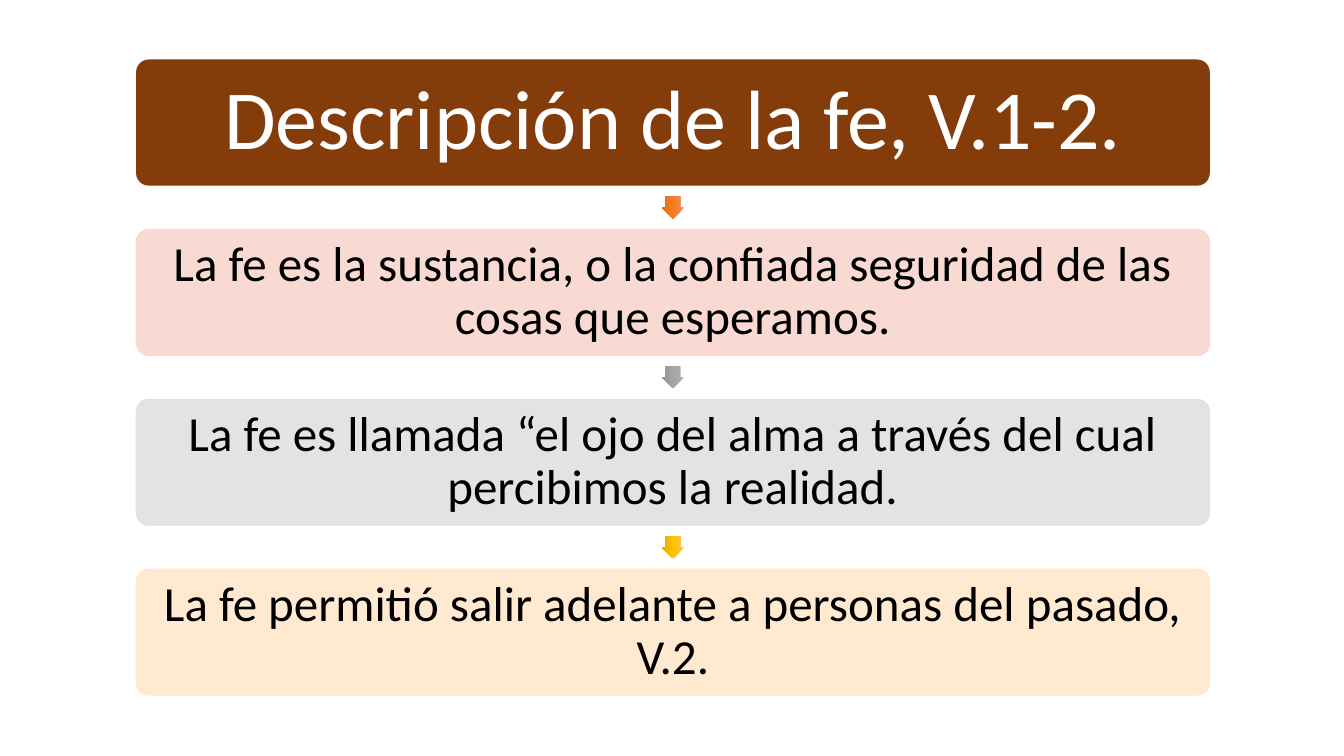
from lxml import etree
from pptx import Presentation
from pptx.dml.color import RGBColor
from pptx.enum.shapes import MSO_SHAPE as SHAPE
from pptx.enum.text import MSO_ANCHOR as ANCHOR, PP_ALIGN as ALIGN
from pptx.oxml.ns import qn
from pptx.util import Cm, Pt

# Layout in centimetres
LEFT, TOP, WIDTH, HEIGHT = 3.43, 1.5, 27.06, 3.18
PITCH = 4.28
ARROW = 0.56

TITLE = "Descripción de la fe, V.1-2."
# Text, box colour, and the gradient of the arrow leading to the box
STEPS = [
    ("La fe es la sustancia, o la confiada seguridad de las cosas que esperamos.",
     "F8D7CE", ("F18C57", "F67B28", "E56C19")),
    ("La fe es llamada “el ojo del alma a través del cual percibimos la realidad.",
     "E1E1E1", ("AFAFAF", "A5A5A5", "939393")),
    ("La fe permitió salir adelante a personas del pasado, V.2.",
     "FFE8CC", ("FFC64B", "FFC000", "E3AB00")),
]


def set_color(fmt, color, alpha=None):
    """Colour a fill or a font; alpha is the opacity in percent."""
    if hasattr(fmt, "solid"):
        fmt.solid()
        target = fmt.fore_color
    else:
        target = fmt.color
    target.rgb = RGBColor.from_string(color)
    return alpha


def set_opacity(sp, percent):
    for clr in sp._element.spPr.iter(qn("a:srgbClr")):
        etree.SubElement(clr, qn("a:alpha"), val=str(percent * 1000))


def set_gradient(sp, colors):
    """Three even stops running at 90 degrees."""
    sp.fill.gradient()
    sp.fill.gradient_angle = 270
    stops = sp._element.spPr.find(qn("a:gradFill")).find(qn("a:gsLst"))
    for stop in list(stops):
        stops.remove(stop)
    for i, color in enumerate(colors):
        stop = etree.SubElement(stops, qn("a:gs"), pos=str(i * 50000))
        etree.SubElement(stop, qn("a:srgbClr"), val=color)


def write(sp, text, *, size, color, inset, font="Calibri"):
    tf = sp.text_frame
    tf.word_wrap = True
    tf.vertical_anchor = ANCHOR.MIDDLE
    tf.margin_left = tf.margin_right = tf.margin_top = tf.margin_bottom = Cm(inset)
    p = tf.paragraphs[0]
    p.alignment = ALIGN.CENTER
    p.line_spacing = 0.9
    r = p.add_run()
    r.text = text
    r.font.size = Pt(size)
    r.font.name = font
    set_color(r.font, color)


def add_box(s, row, fill):
    sp = s.shapes.add_shape(SHAPE.ROUNDED_RECTANGLE, Cm(LEFT), Cm(TOP + row * PITCH),
                            Cm(WIDTH), Cm(HEIGHT))
    sp.adjustments[0] = 0.1
    sp.shadow.inherit = False
    set_color(sp.fill, fill)
    sp.line.fill.background()
    return sp


def add_step(s, row, text, fill):
    sp = add_box(s, row, fill)
    set_color(sp.line.fill, fill)
    sp.line.width = Pt(0.5)
    set_opacity(sp, 90)
    write(sp, text, size=35, color="000000", inset=0.13)


def add_arrow(s, row, colors):
    """Arrow centred in the gap above the given row."""
    x = LEFT + (WIDTH - ARROW) / 2
    y = TOP + row * PITCH - (PITCH - HEIGHT + ARROW) / 2
    sp = s.shapes.add_shape(SHAPE.RIGHT_ARROW, Cm(x), Cm(y), Cm(ARROW), Cm(ARROW))
    sp.rotation = 90
    sp.adjustments[0] = 0.667
    sp.adjustments[1] = 0.5
    sp.shadow.inherit = False
    set_gradient(sp, colors)
    sp.line.fill.background()


def main():
    prs = Presentation()
    prs.slide_width, prs.slide_height = Cm(33.87), Cm(19.05)
    s = prs.slides.add_slide(prs.slide_layouts[6])

    # Heading
    heading = add_box(s, 0, "843C0B")
    write(heading, TITLE, size=60, color="FFFFFF", inset=0.21)

    # Steps, each below its arrow
    for row, (text, fill, gradient) in enumerate(STEPS, start=1):
        add_arrow(s, row, gradient)
        add_step(s, row, text, fill)

    prs.save("out.pptx")


if __name__ == "__main__":
    main()
